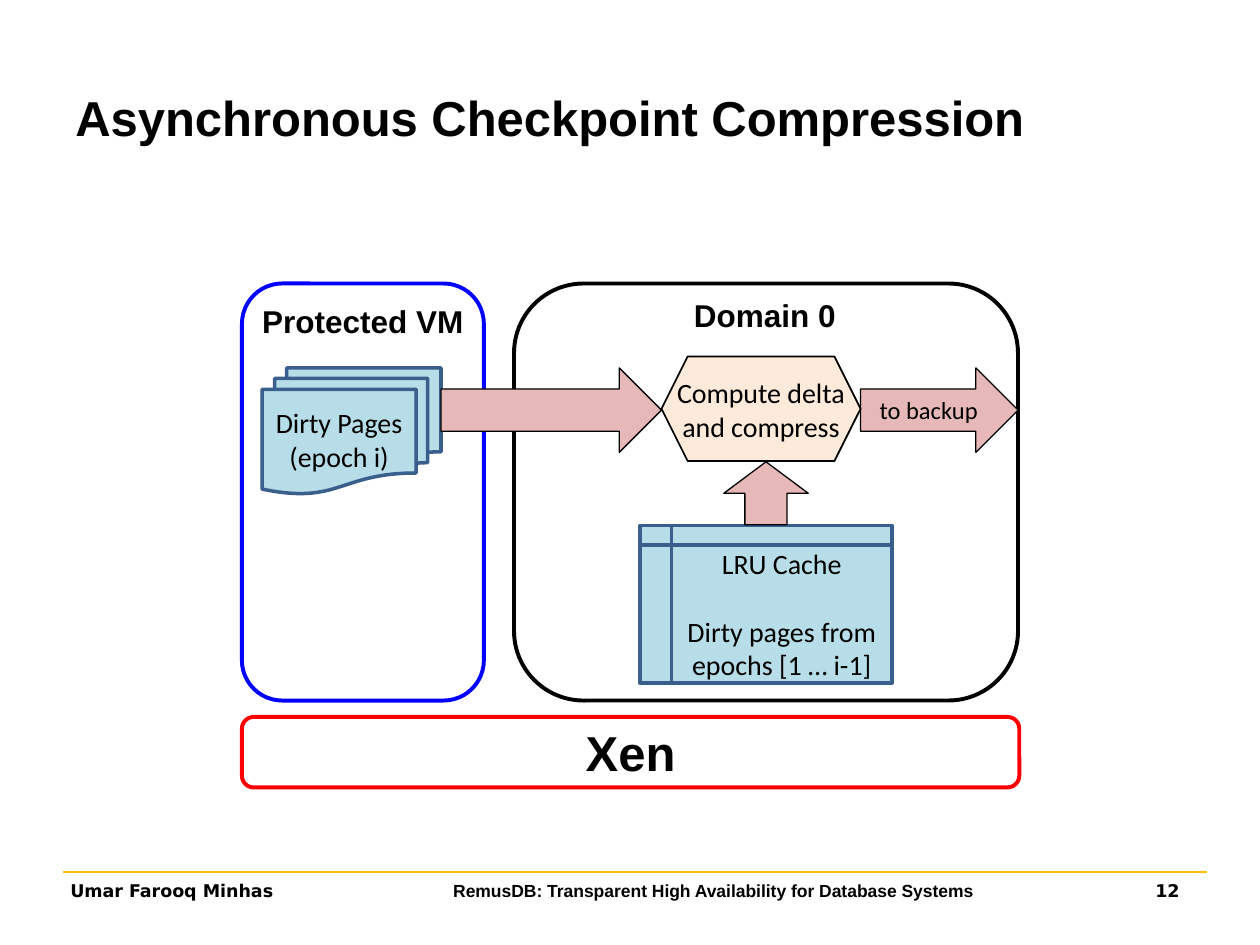
from pptx import Presentation
from pptx.dml.color import RGBColor
from pptx.enum.shapes import MSO_CONNECTOR, MSO_SHAPE
from pptx.enum.text import MSO_ANCHOR, PP_ALIGN
from pptx.oxml.ns import qn
from pptx.util import Inches, Pt
from lxml import etree

ROUNDED = MSO_SHAPE.ROUNDED_RECTANGLE
ARROW = MSO_SHAPE.RIGHT_ARROW
PAGES = MSO_SHAPE.FLOWCHART_MULTIDOCUMENT
STORAGE = MSO_SHAPE.FLOWCHART_INTERNAL_STORAGE
HEXAGON = MSO_SHAPE.HEXAGON
TOP, MIDDLE = MSO_ANCHOR.TOP, MSO_ANCHOR.MIDDLE
LEFT, CENTER, RIGHT = PP_ALIGN.LEFT, PP_ALIGN.CENTER, PP_ALIGN.RIGHT

BLACK, BLUE, RED, GOLD = "000000", "0000FF", "FF0000", "FFC000"
PAGE_BLUE, PAGE_EDGE, PINK, PEACH = "B7DEE8", "3A5F8C", "E6B9B8", "FDEADA"

# Text style: font, size, bold
HEADING = ("Arial", 28, True)
LABEL = ("Arial", 18, True)
BODY = ("Calibri", 16, False)
SMALL = ("Calibri", 14, False)
FOOTER = ("Arial", 10, True)
FOOTER_ENDS = ("DejaVu Sans", 10, True)

# Preset, (left, top, width, height), fill, line colour, line width, rotation,
# then lines of text, style, anchor and wrap
SHAPES = [
    (ROUNDED, (1.92, 2.25, 1.92, 3.31), None, BLUE, 2.25, 0, ["Protected VM"], LABEL, TOP, False),
    (ROUNDED, (1.92, 5.69, 6.17, 0.56), None, RED, 2.25, 0, ["Xen"], HEADING, MIDDLE, True),
    (ROUNDED, (4.08, 2.25, 4, 3.31), None, BLACK, 2.25, 0, [], LABEL, TOP, True),
    (PAGES, (2.08, 2.92, 1.42, 1), PAGE_BLUE, PAGE_EDGE, 2, 0,
     ["Dirty Pages", "(epoch i)"], BODY, MIDDLE, True),
    (ARROW, (3.5, 2.92, 1.75, 0.67), PINK, BLACK, 0.75, 0, [], BODY, MIDDLE, True),
    (STORAGE, (5.08, 4.17, 2, 1.25), PAGE_BLUE, PAGE_EDGE, 2, 0,
     ["LRU Cache", "Dirty pages from", "epochs [1 … i-1]"], BODY, MIDDLE, True),
    (ARROW, (6.83, 2.92, 1.25, 0.67), PINK, BLACK, 0.75, 0, ["to backup"], SMALL, MIDDLE, True),
    (HEXAGON, (5.25, 2.83, 1.58, 0.83), PEACH, BLACK, 1, 0,
     ["Compute delta", "and compress"], BODY, TOP, False),
    (ARROW, (5.83, 3.58, 0.5, 0.67), PINK, BLACK, 0.75, 270, [], BODY, MIDDLE, True),
]

# Text, (left, top, width, height), style, alignment, anchor, wrap
TEXTS = [
    ("Asynchronous Checkpoint Compression", (0.5, 0.3, 9, 1.25), HEADING, LEFT, MIDDLE, True),
    ("Domain 0", (5.41, 2.3, 1.34, 0.4), LABEL, LEFT, TOP, False),
    ("Umar Farooq Minhas", (0.46, 6.93, 2.2, 0.28), FOOTER_ENDS, LEFT, MIDDLE, True),
    ("RemusDB: Transparent High Availability for Database Systems",
     (3.16, 6.93, 5, 0.28), FOOTER, CENTER, MIDDLE, True),
    ("12", (8.66, 6.93, 0.8, 0.28), FOOTER_ENDS, RIGHT, MIDDLE, True),
]


def color(value):
    return RGBColor.from_string(value)


def write(shape, lines, style, alignment, anchor, wrap):
    font_name, size, bold = style
    frame = shape.text_frame
    frame.word_wrap = wrap
    frame.vertical_anchor = anchor
    frame.text = "\n".join(lines)
    for paragraph in frame.paragraphs:
        paragraph.alignment = alignment
        for run in paragraph.runs:
            run.font.name = font_name
            run.font.size = Pt(size)
            run.font.bold = bold
            run.font.color.rgb = color(BLACK)


def add_shape(slide, preset, box, fill, line, line_width, rotation, lines, style, anchor, wrap):
    shape = slide.shapes.add_shape(preset, *map(Inches, box))
    shape.shadow.inherit = False
    shape.rotation = rotation
    if fill:
        shape.fill.solid()
        shape.fill.fore_color.rgb = color(fill)
    else:
        shape.fill.background()
    shape.line.color.rgb = color(line)
    shape.line.width = Pt(line_width)
    if lines:
        write(shape, lines, style, CENTER, anchor, wrap)
    if preset == STORAGE:
        shape.text_frame.paragraphs[1].space_before = Pt(19.5)


def add_footer_rule(slide):
    rule = slide.shapes.add_connector(
        MSO_CONNECTOR.STRAIGHT, Inches(0.5), Inches(6.92), Inches(9.58), Inches(6.92))
    rule.line.color.rgb = color(GOLD)
    rule.line.width = Pt(0.75)
    etree.SubElement(rule._element.spPr, qn("a:effectLst"))


def main():
    presentation = Presentation()
    presentation.slide_width, presentation.slide_height = Inches(10), Inches(7.5)
    slide = presentation.slides.add_slide(presentation.slide_layouts[6])
    add_footer_rule(slide)
    for entry in SHAPES:
        add_shape(slide, *entry)
    for text, box, style, alignment, anchor, wrap in TEXTS:
        text_box = slide.shapes.add_textbox(*map(Inches, box))
        write(text_box, [text], style, alignment, anchor, wrap)
    presentation.save("out.pptx")


if __name__ == "__main__":
    main()
